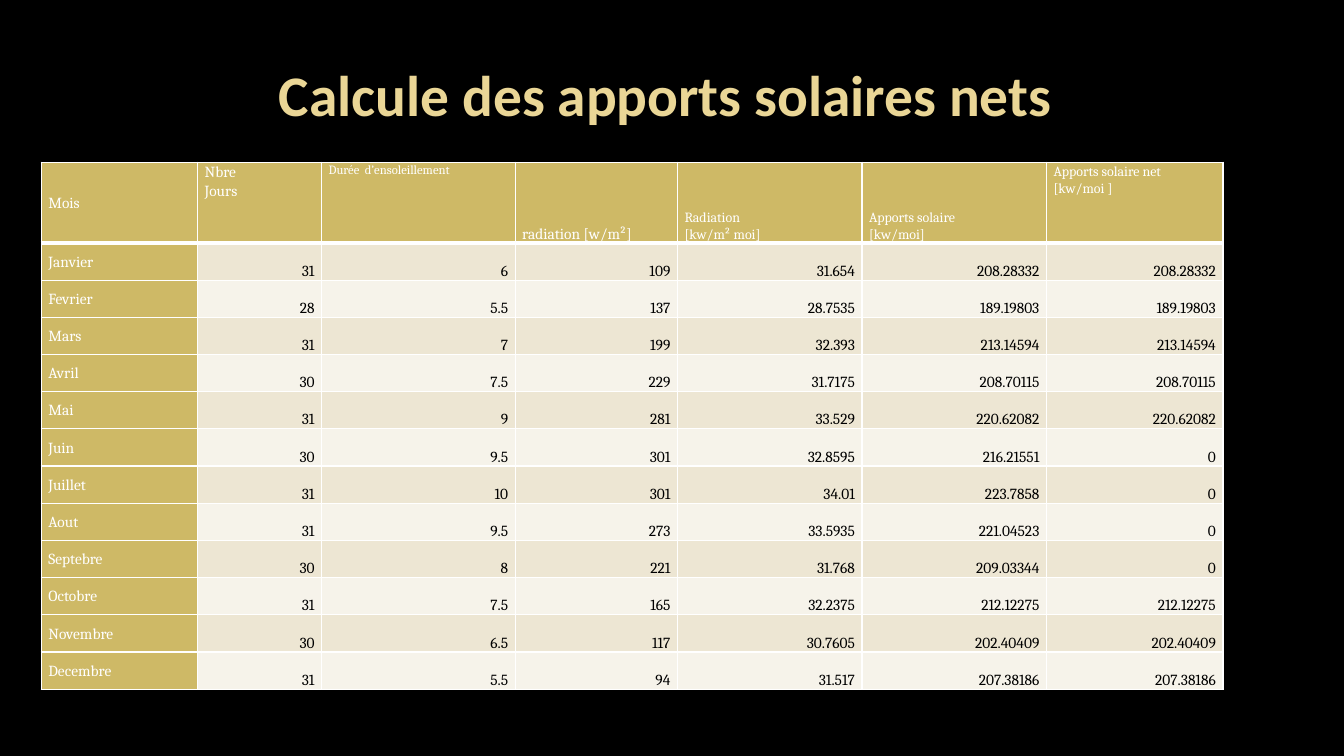
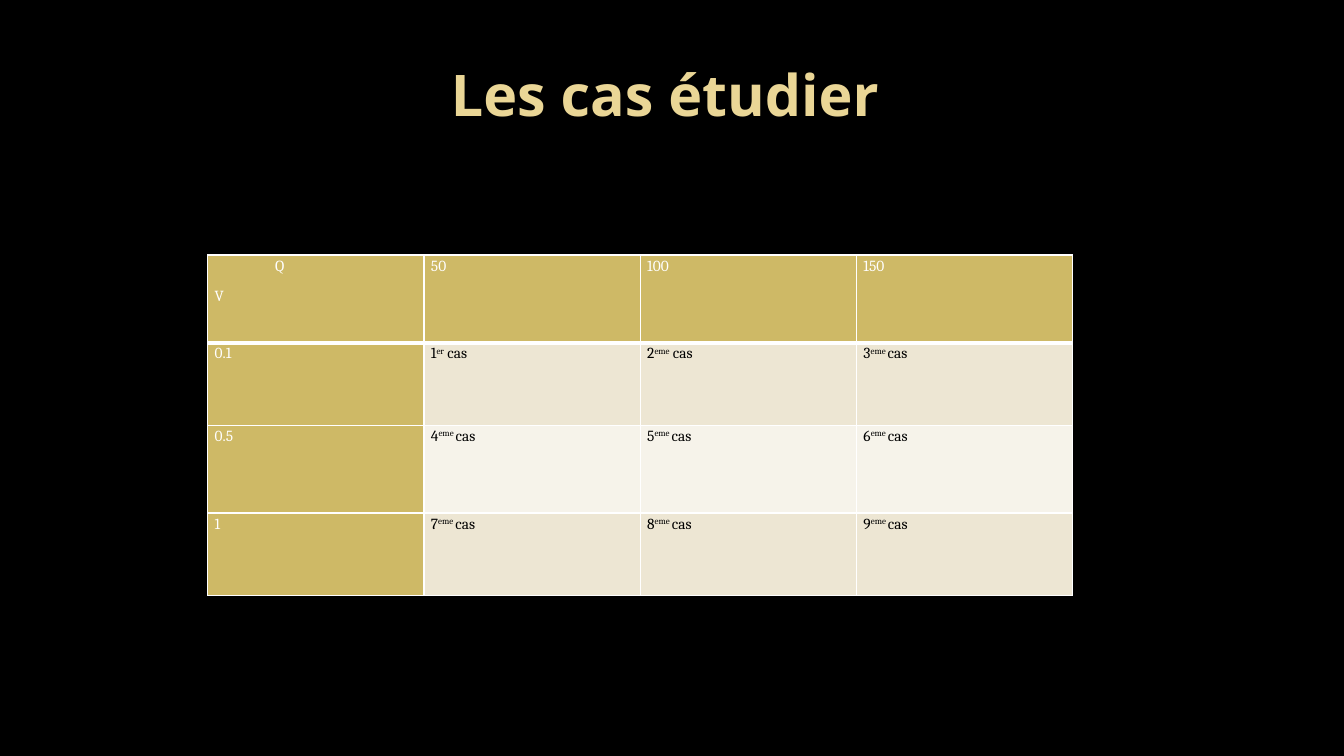
from dataclasses import dataclass

from lxml.etree import SubElement
from pptx import Presentation
from pptx.dml.color import RGBColor
from pptx.enum.text import MSO_ANCHOR, PP_ALIGN
from pptx.oxml.ns import qn
from pptx.util import Inches, Pt


@dataclass(frozen=True)
class Theme:
    background: str = "000000"
    title: str = "EAD696"
    header: str = "CEB966"
    bands: tuple = ("EDE6D3", "F6F3EA")
    light: str = "FFFFFF"
    dark: str = "000000"
    font: str = "Cambria"
    title_size: int = 41
    size: int = 11
    small: int = 10
    tiny: int = 9
    line_spacing: float = 1.07
    border: int = 1
    header_border: int = 3


THEME = Theme()

# Solar gains: header text, anchor and size for each column
SOLAR_HEADERS = [
    ("Mois", MSO_ANCHOR.MIDDLE, THEME.size),
    ("Nbre\nJours", MSO_ANCHOR.TOP, THEME.size),
    ("Durée  d’ensoleillement", MSO_ANCHOR.TOP, THEME.tiny),
    ("radiation [w/m²]", MSO_ANCHOR.BOTTOM, THEME.size),
    ("Radiation\n[kw/m² moi]", MSO_ANCHOR.BOTTOM, THEME.small),
    ("Apports solaire\n[kw/moi]", MSO_ANCHOR.BOTTOM, THEME.small),
    ("Apports solaire net\n[kw/moi ]", MSO_ANCHOR.TOP, THEME.small),
]
SOLAR_WIDTHS = [1.55, 1.23, 1.92, 1.61, 1.83, 1.83, 1.75]
SOLAR_ROWS = [
    ("Janvier", "31", "6", "109", "31.654", "208.28332", "208.28332"),
    ("Fevrier", "28", "5.5", "137", "28.7535", "189.19803", "189.19803"),
    ("Mars", "31", "7", "199", "32.393", "213.14594", "213.14594"),
    ("Avril", "30", "7.5", "229", "31.7175", "208.70115", "208.70115"),
    ("Mai", "31", "9", "281", "33.529", "220.62082", "220.62082"),
    ("Juin", "30", "9.5", "301", "32.8595", "216.21551", "0"),
    ("Juillet", "31", "10", "301", "34.01", "223.7858", "0"),
    ("Aout", "31", "9.5", "273", "33.5935", "221.04523", "0"),
    ("Septebre", "30", "8", "221", "31.768", "209.03344", "0"),
    ("Octobre", "31", "7.5", "165", "32.2375", "212.12275", "212.12275"),
    ("Novembre", "30", "6.5", "117", "30.7605", "202.40409", "202.40409"),
    ("Decembre", "31", "5.5", "94", "31.517", "207.38186", "207.38186"),
]

# Studied cases: carets enclose superscript text
CASE_ROWS = [
    ("Q\nV", "50", "100", "150"),
    ("0.1", "1^er^ cas", "2^eme^ cas", "3^eme ^cas"),
    ("0.5", "4^eme ^cas", "5^eme ^cas", "6^eme ^cas"),
    ("1", "7^eme ^cas", "8^eme ^cas", "9^eme ^cas"),
]


def write_text(frame, text, *, size=THEME.size, color=THEME.light, font=THEME.font,
               bold=False, align=PP_ALIGN.LEFT, spacing=THEME.line_spacing, after=0):
    """Write one paragraph per line, with superscripts between carets."""
    for index, line in enumerate(text.split("\n")):
        paragraph = frame.paragraphs[0] if index == 0 else frame.add_paragraph()
        paragraph.alignment = align
        paragraph.line_spacing = spacing
        paragraph.space_after = Pt(after)
        for part, content in enumerate(line.split("^")):
            run = paragraph.add_run()
            run.text = content
            run.font.name = font
            run.font.size = Pt(size)
            run.font.bold = bold
            run.font.color.rgb = RGBColor.from_string(color)
            if part % 2:
                run.font._element.set("baseline", "30000")


def add_titled_slide(presentation, title, font):
    slide = presentation.slides.add_slide(presentation.slide_layouts[6])
    slide.background.fill.solid()
    slide.background.fill.fore_color.rgb = RGBColor.from_string(THEME.background)
    box = slide.shapes.add_textbox(Inches(0.67), Inches(0.3), Inches(12), Inches(1.25))
    frame = box.text_frame
    frame.word_wrap = True
    frame.vertical_anchor = MSO_ANCHOR.MIDDLE
    write_text(frame, title, size=THEME.title_size, color=THEME.title, font=font,
               bold=True, align=PP_ALIGN.CENTER, spacing=1)
    return slide


def add_table(slide, left, top, widths, heights):
    shape = slide.shapes.add_table(len(heights), len(widths), Inches(left), Inches(top),
                                   Inches(sum(widths)), Inches(sum(heights)))
    table = shape.table
    table.horz_banding = False
    for column, width in zip(table.columns, widths):
        column.width = Inches(width)
    for row, height in zip(table.rows, heights):
        row.height = Inches(height)
    return table


def add_borders(cell, bottom):
    properties = cell._tc.get_or_add_tcPr()
    widths = {"lnL": THEME.border, "lnR": THEME.border, "lnT": THEME.border, "lnB": bottom}
    for side, width in widths.items():
        line = SubElement(properties, qn(f"a:{side}"), w=str(Pt(width)))
        fill = SubElement(line, qn("a:solidFill"))
        SubElement(fill, qn("a:srgbClr"), val=THEME.light)


def fill_cell(table, row, column, text, *, anchor=MSO_ANCHOR.TOP, margin_top=0, **text_format):
    """Colour a cell by its place: header row, header column or band."""
    cell = table.cell(row, column)
    is_header = row == 0 or column == 0
    cell.margin_left = cell.margin_right = Inches(0.07)
    cell.margin_top, cell.margin_bottom = Inches(margin_top), 0
    cell.vertical_anchor = anchor
    add_borders(cell, THEME.header_border if row == 0 else THEME.border)
    cell.fill.solid()
    color = THEME.header if is_header else THEME.bands[(row - 1) % 2]
    cell.fill.fore_color.rgb = RGBColor.from_string(color)
    write_text(cell.text_frame, text, color=THEME.light if is_header else THEME.dark,
               **text_format)
    return cell


def build_solar_gains(presentation):
    slide = add_titled_slide(presentation, "Calcule des apports solaires nets ", "Calibri")
    header_height, total_height = 0.8, 5.23
    month_height = (total_height - header_height) / len(SOLAR_ROWS)
    table = add_table(slide, 0.41, 1.61, SOLAR_WIDTHS,
                      [header_height] + [month_height] * len(SOLAR_ROWS))
    for column, (text, anchor, size) in enumerate(SOLAR_HEADERS):
        fill_cell(table, 0, column, text, anchor=anchor, size=size)
    for row, (month, *values) in enumerate(SOLAR_ROWS, start=1):
        fill_cell(table, row, 0, month, anchor=MSO_ANCHOR.MIDDLE)
        for column, value in enumerate(values, start=1):
            fill_cell(table, row, column, value, anchor=MSO_ANCHOR.BOTTOM,
                      align=PP_ALIGN.RIGHT)


def build_cases(presentation):
    slide = add_titled_slide(presentation, "Les cas étudier ", "Noto Sans")
    table = add_table(slide, 2.06, 2.53, [2.145] * 4, [0.87, 0.82] * 2)
    for row, texts in enumerate(CASE_ROWS):
        for column, text in enumerate(texts):
            fill_cell(table, row, column, text, margin_top=0.01, after=8)
    # Q stands to the right of V in the corner cell
    corner = table.cell(0, 0).text_frame.paragraphs[0]
    corner._p.get_or_add_pPr().set("marL", str(Inches(0.6)))


def main():
    presentation = Presentation()
    presentation.slide_width = Inches(13.33)
    presentation.slide_height = Inches(7.5)
    build_solar_gains(presentation)
    build_cases(presentation)
    presentation.save("out.pptx")


if __name__ == "__main__":
    main()
